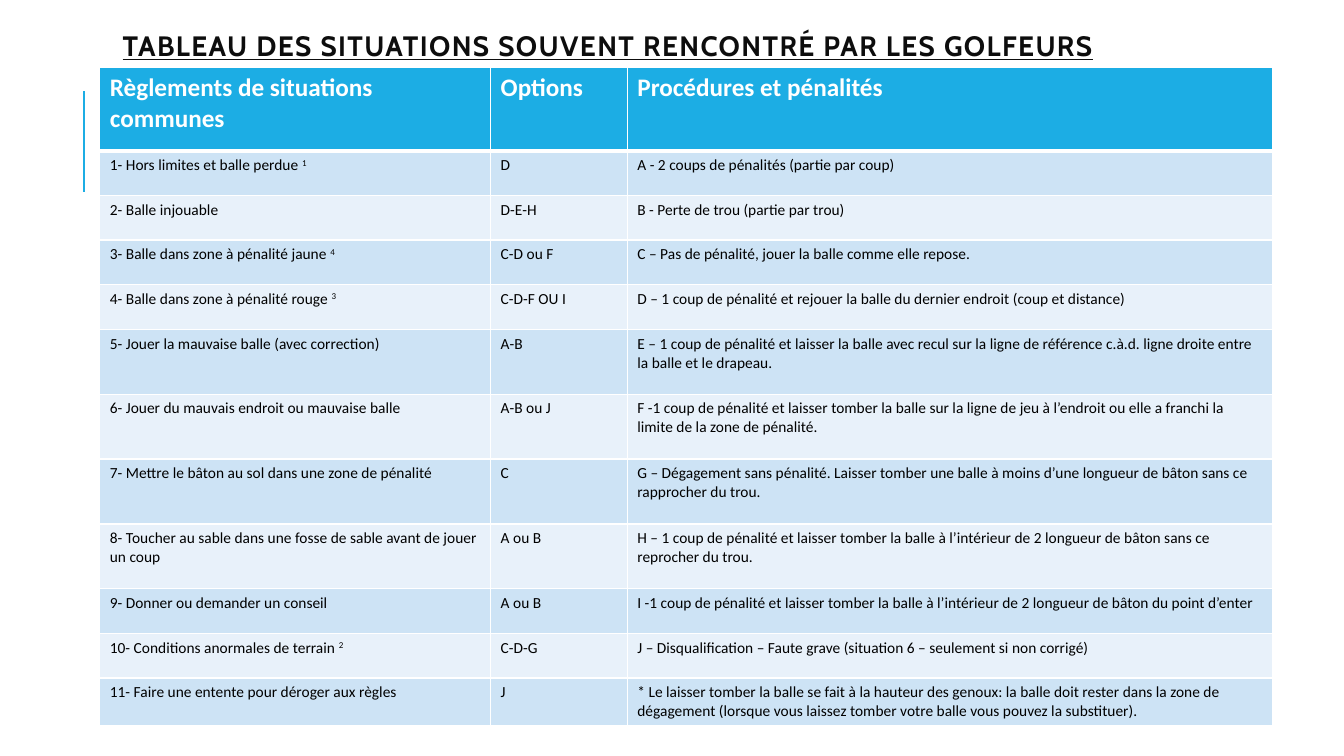
from lxml.etree import SubElement
from pptx import Presentation
from pptx.dml.color import RGBColor
from pptx.enum.shapes import MSO_CONNECTOR
from pptx.enum.text import MSO_ANCHOR
from pptx.oxml.ns import qn
from pptx.util import Pt

BLUE = RGBColor(0x1C, 0xAD, 0xE4)
BAND_DARK = RGBColor(0xCD, 0xE3, 0xF5)
BAND_LIGHT = RGBColor(0xE8, 0xF1, 0xFA)
WHITE = RGBColor(0xFF, 0xFF, 0xFF)
BLACK = RGBColor(0x00, 0x00, 0x00)
TITLE_INK = RGBColor(0x0D, 0x0D, 0x0D)

TITLE = "TABLEAU DES SITUATIONS SOUVENT RENCONTRÉ PAR LES GOLFEURS"
HEADINGS = ("Règlements de situations communes", "Options", "Procédures et pénalités")
COLUMN_WIDTHS = (279.2, 97.6, 461.3)
HEADER_HEIGHT, SHORT, TALL, LAST = 59.5, 31.85, 46.4, 34.2

# Row height, situation, footnote number, options, procedure
RULES = [
    (SHORT, "1- Hors limites et balle perdue ", "1", "D",
     "A - 2 coups de pénalités (partie par coup)"),
    (SHORT, "2- Balle injouable", "", "D-E-H",
     "B - Perte de trou (partie par trou)"),
    (SHORT, "3- Balle dans zone à pénalité jaune ", "4", "C-D ou F",
     "C – Pas de pénalité, jouer la balle comme elle repose."),
    (SHORT, "4- Balle dans zone à pénalité rouge ", "3", "C-D-F OU I",
     "D – 1 coup de pénalité et rejouer la balle du dernier endroit (coup et distance)"),
    (TALL, "5- Jouer la mauvaise balle (avec correction)", "", "A-B",
     "E – 1 coup de pénalité et laisser la balle avec recul sur la ligne de référence "
     "c.à.d. ligne droite entre la balle et le drapeau."),
    (TALL, "6- Jouer du mauvais endroit ou mauvaise balle", "", "A-B ou J",
     "F -1 coup de pénalité et laisser tomber la balle sur la ligne de jeu à l’endroit "
     "ou elle a franchi la limite de la zone de pénalité."),
    (TALL, "7- Mettre le bâton au sol dans une zone de pénalité", "", "C",
     "G – Dégagement sans pénalité. Laisser tomber une balle à moins d’une longueur de "
     "bâton sans ce rapprocher du trou."),
    (TALL, "8- Toucher au sable dans une fosse de sable avant de jouer un coup", "", "A ou B",
     "H – 1 coup de pénalité et laisser tomber la balle à l’intérieur de 2 longueur de "
     "bâton sans ce reprocher du trou."),
    (SHORT, "9- Donner ou demander un conseil", "", "A ou B",
     "I -1 coup de pénalité et laisser tomber la balle à l’intérieur de 2 longueur de "
     "bâton du point d’enter"),
    (SHORT, "10- Conditions anormales de terrain ", "2", "C-D-G",
     "J – Disqualification – Faute grave (situation 6 – seulement si non corrigé)"),
    (LAST, "11- Faire une entente pour déroger aux règles", "", "J",
     "* Le laisser tomber la balle se fait à la hauteur des genoux: la balle doit rester "
     "dans la zone de dégagement (lorsque vous laissez tomber votre balle vous pouvez la "
     "substituer)."),
]


def add_run(paragraph, text, font_name, size, color, bold=False):
    run = paragraph.add_run()
    run.text = text
    run.font.name = font_name
    run.font.size = Pt(size)
    run.font.bold = bold
    run.font.color.rgb = color
    return run


def add_title(slide, left, top, width, height):
    title = slide.shapes.add_textbox(Pt(left), Pt(top), Pt(width), Pt(height))
    frame = title.text_frame
    frame.word_wrap = True
    frame.vertical_anchor = MSO_ANCHOR.MIDDLE
    paragraph = frame.paragraphs[0]
    paragraph.line_spacing = 0.8
    run = add_run(paragraph, TITLE, "Cabin", 20, TITLE_INK, bold=True)
    run.font.underline = True
    run.font._element.set("spc", "100")


def add_accent_line(slide, x, top, height):
    accent = slide.shapes.add_connector(
        MSO_CONNECTOR.STRAIGHT, Pt(x), Pt(top + height), Pt(x), Pt(top))
    accent.line.color.rgb = BLUE
    accent.line.width = Pt(1.5)
    SubElement(accent._element.spPr, qn("a:effectLst"))


def style_cell(cell, fill, top_border=1, bottom_border=1):
    """Give the cell white borders, in points, and then its fill."""
    properties = cell._tc.get_or_add_tcPr()
    borders = {"a:lnL": 1, "a:lnR": 1, "a:lnT": top_border, "a:lnB": bottom_border}
    for side, width in borders.items():
        border = SubElement(properties, qn(side), w=str(Pt(width)))
        solid = SubElement(border, qn("a:solidFill"))
        SubElement(solid, qn("a:srgbClr"), val=str(WHITE))
    cell.fill.solid()
    cell.fill.fore_color.rgb = fill


def add_rules_table(slide, left, top):
    heights = [HEADER_HEIGHT] + [rule[0] for rule in RULES]
    table = slide.shapes.add_table(
        len(heights), len(COLUMN_WIDTHS), Pt(left), Pt(top),
        Pt(sum(COLUMN_WIDTHS)), Pt(sum(heights))).table
    for column, width in zip(table.columns, COLUMN_WIDTHS):
        column.width = Pt(width)
    for row, height in zip(table.rows, heights):
        row.height = Pt(height)

    for cell, heading in zip(table.rows[0].cells, HEADINGS):
        style_cell(cell, BLUE, bottom_border=3)
        add_run(cell.text_frame.paragraphs[0], heading, "Calibri", 18, WHITE, bold=True)

    for number, (_, situation, footnote, options, procedure) in enumerate(RULES, start=1):
        cells = table.rows[number].cells
        for cell, text in zip(cells, (situation, options, procedure)):
            style_cell(cell, BAND_DARK if number % 2 else BAND_LIGHT,
                       top_border=3 if number == 1 else 1)
            add_run(cell.text_frame.paragraphs[0], text, "Calibri", 11, BLACK)
        if footnote:
            mark = add_run(cells[0].text_frame.paragraphs[0], footnote, "Calibri", 11, BLACK)
            mark.font._element.set("baseline", "30000")


def main():
    presentation = Presentation()
    presentation.slide_width = Pt(960)
    presentation.slide_height = Pt(540)
    slide = presentation.slides.add_slide(presentation.slide_layouts[6])
    add_accent_line(slide, 60, 65, 72)
    add_title(slide, 80.6, 9.4, 765.4, 50.4)
    add_rules_table(slide, 71.3, 48.3)
    presentation.save("out.pptx")


if __name__ == "__main__":
    main()
